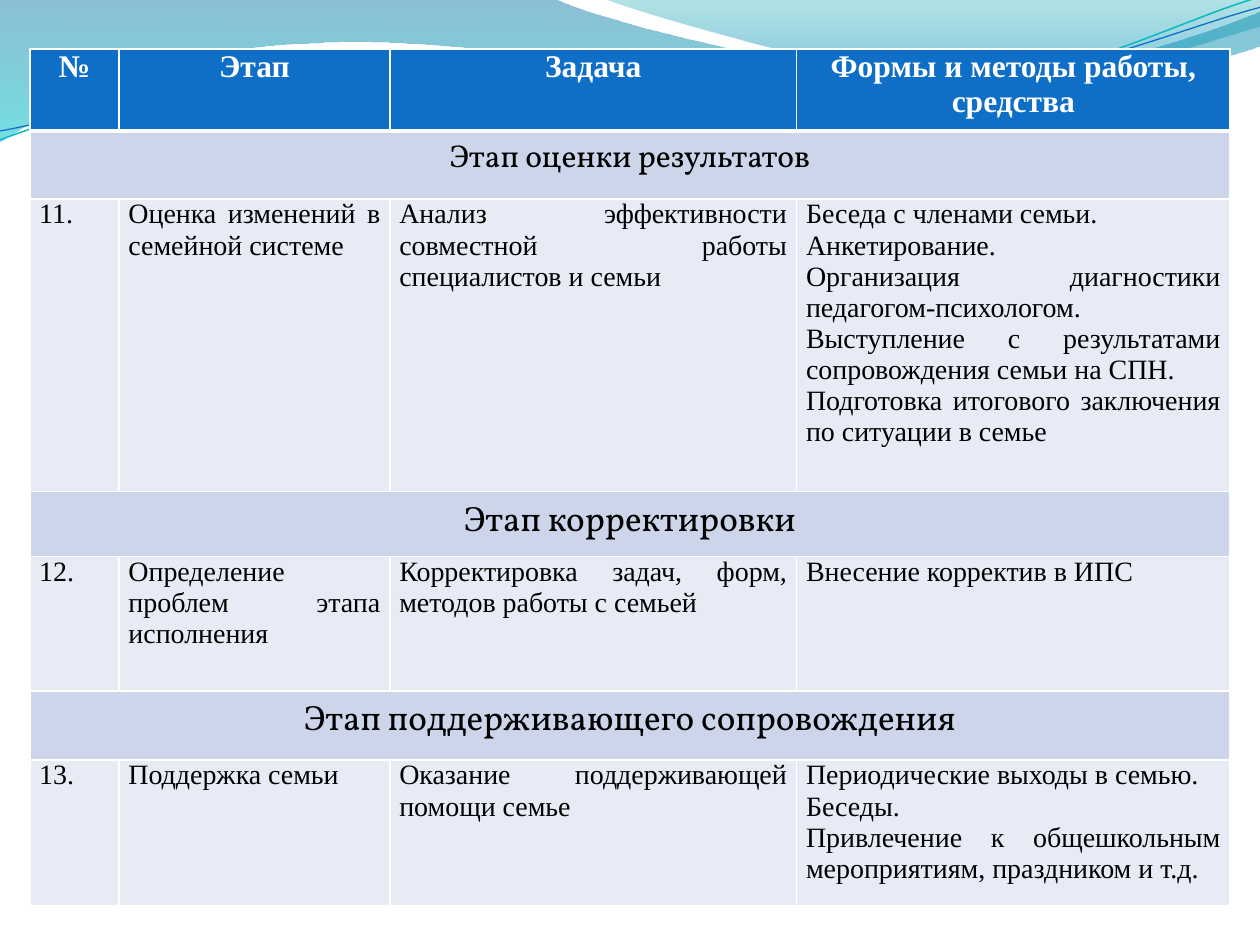
from dataclasses import dataclass

import pptx
import pptx.dml.color
import pptx.enum.text
import pptx.oxml.ns
import pptx.util
from lxml import etree
from pptx.util import Cm, Pt

RGB = pptx.dml.color.RGBColor.from_string
qn = pptx.oxml.ns.qn
ALIGN = pptx.enum.text.PP_ALIGN


@dataclass(frozen=True)
class Theme:
    header_fill: str = "0F6FC6"
    section_fill: str = "CCD5EA"
    body_fill: str = "E7EBF5"
    white: str = "FFFFFF"
    black: str = "000000"
    teal_line: str = "0AB8BF"
    blue_line: str = "0F6FC6"
    wide_wave: tuple = ((0, "0074A1", 45), (1, "00C6CF", 55))
    right_wave: tuple = ((0, "00A1A9", 30), (0.8, "008BBF", 45))
    body_font: str = "Times New Roman"
    section_font: str = "Vollkorn"
    header_size: int = 18
    section_size: int = 20
    body_size: int = 16
    border: int = 1
    header_border: int = 3


THEME = Theme()

# Outlines in cm: a pair is a straight step, a six-tuple a Bézier curve.
WIDE_WAVE = [
    (0, 0), (11.18, -0.03),
    (12.09, 0.43, 16.87, 1.6, 19.25, 1.6),
    (21.67, 1.6, 24.33, 0.66, 25.4, 0.23),
    (25.43, 0.91),
    (24.97, 1.12, 22.1, 1.93, 18.95, 1.91),
    (15.8, 1.91, 9.7, 0.71, 6.53, 0.86),
    (3.28, 0.91, 1.17, 2.11, -0.03, 2.87),
    (0, 0),
]
RIGHT_WAVE = [
    (12.17, -0.03),
    (12.93, 0.28, 17.32, 1.57, 19.53, 1.65),
    (21.74, 1.75, 24.41, 0.81, 25.4, 0.53),
    (25.4, 0), (12.17, -0.03),
]
CURVE_ROTATION = -2.7
TEAL_CURVE = [
    (-0.05, 2.22),
    (1.19, 1.82, 4.02, 1.04, 7.05, 1.06),
    (10.05, 1.07, 15.02, 2.37, 18.08, 2.29),
    (21.13, 2.2, 23.87, 0.91, 25.41, 0.55),
]
BLUE_CURVE = [
    (-0.04, 2.04),
    (1.16, 1.9, 4.18, 1.15, 7.2, 1.16),
    (10.25, 1.18, 15.13, 2.25, 18.18, 2.16),
    (21.21, 2.1, 23.93, 1.06, 25.45, 0.75),
]

COLUMN_WIDTHS = [1.8, 5.46, 8.2, 8.74]
HEADINGS = ["№", "Этап", "Задача", "Формы и методы работы, средства"]
HEADING_HEIGHT = 1.65
# Section title, its size, its height, then the stage row and its height.
STAGES = [
    ("Этап оценки результатов", THEME.header_size, 1.37,
     ["11.", "Оценка изменений в семейной системе",
      "Анализ эффективности совместной работы специалистов и семьи",
      "Беседа с членами семьи.\nАнкетирование.\n"
      "Организация диагностики педагогом-психологом.\n"
      "Выступление с результатами сопровождения семьи на СПН.\n"
      "Подготовка итогового заключения по ситуации в семье"], 5.9),
    ("Этап корректировки", THEME.section_size, 1.31,
     ["12.", "Определение проблем этапа исполнения",
      "Корректировка задач, форм, методов работы с семьей",
      "Внесение корректив в ИПС"], 2.71),
    ("Этап поддерживающего сопровождения", THEME.section_size, 1.39,
     ["13.", "Поддержка семьи", "Оказание поддерживающей помощи семье",
      "Периодические выходы в семью.\nБеседы.\n"
      "Привлечение к общешкольным мероприятиям, праздником и т.д."], 2.94),
]


def add_outline(slide, left, top, outline, close):
    """Draw the outline, turning each six-tuple step into a Bézier segment."""
    points = [(Cm(left + part[-2]), Cm(top + part[-1])) for part in outline]
    builder = slide.shapes.build_freeform(*points[0])
    builder.add_line_segments(points[1:], close=close)
    shape = builder.convert_to_shape()
    shape.shadow.inherit = False
    segments = list(shape._element.iter(qn("a:lnTo")))
    for segment, part in zip(segments, outline[1:]):
        if len(part) == 2:
            continue
        segment.tag = qn("a:cubicBezTo")
        for index in (0, 1):
            x, y = part[2 * index:2 * index + 2]
            control = etree.Element(qn("a:pt"), x=str(Cm(left + x) - shape.left),
                                    y=str(Cm(top + y) - shape.top))
            segment.insert(index, control)
    return shape


def add_wave(slide, left, top, outline, stops):
    wave = add_outline(slide, left, top, outline, close=True)
    wave.line.fill.background()
    wave.fill.gradient()
    wave.fill.gradient_angle = 270
    for stop, (position, color, _) in zip(wave.fill.gradient_stops, stops):
        stop.position = position
        stop.color.rgb = RGB(color)
    for color, (_, _, opacity) in zip(wave._element.iter(qn("a:srgbClr")), stops):
        etree.SubElement(color, qn("a:alpha"), val=str(opacity * 1000))


def add_curve(slide, left, top, outline, color, width):
    curve = add_outline(slide, left, top, outline, close=False)
    curve.rotation = CURVE_ROTATION
    curve.fill.background()
    curve.line.color.rgb = RGB(color)
    curve.line.width = Pt(width)


def add_wave_header(slide, left, top):
    add_wave(slide, left, top, WIDE_WAVE, THEME.wide_wave)
    add_wave(slide, left, top, RIGHT_WAVE, THEME.right_wave)
    add_curve(slide, left, top, TEAL_CURVE, THEME.teal_line, 0.85)
    add_curve(slide, left, top, BLUE_CURVE, THEME.blue_line, 0.75)


def set_borders(cell, top, bottom):
    properties = cell._tc.get_or_add_tcPr()
    widths = {"L": THEME.border, "R": THEME.border, "T": top, "B": bottom}
    for index, (side, width) in enumerate(widths.items()):
        line = etree.Element(qn("a:ln" + side), w=str(Pt(width)))
        fill = etree.SubElement(line, qn("a:solidFill"))
        etree.SubElement(fill, qn("a:srgbClr"), val=THEME.white)
        properties.insert(index, line)


def style_cell(cell, fill, top=THEME.border, bottom=THEME.border):
    cell.fill.solid()
    cell.fill.fore_color.rgb = RGB(fill)
    set_borders(cell, top, bottom)


def write_cell(cell, text, font, size, color, align, bold=False, tight=True):
    cell.text = text
    if tight:
        cell.margin_left = cell.margin_right = Cm(0.19)
        cell.margin_top = cell.margin_bottom = 0
    for paragraph in cell.text_frame.paragraphs:
        paragraph.alignment = align
        paragraph.font.name = font
        paragraph.font.size = Pt(size)
        paragraph.font.bold = bold
        paragraph.font.color.rgb = RGB(color)


def add_stage_table(slide, left, top):
    heights = [HEADING_HEIGHT]
    for _, _, section_height, _, stage_height in STAGES:
        heights += [section_height, stage_height]
    table = slide.shapes.add_table(
        len(heights), len(COLUMN_WIDTHS), Cm(left), Cm(top),
        Cm(sum(COLUMN_WIDTHS)), Cm(sum(heights))).table
    for column, width in zip(table.columns, COLUMN_WIDTHS):
        column.width = Cm(width)
    for row, height in zip(table.rows, heights):
        row.height = Cm(height)

    for cell, heading in zip(table.rows[0].cells, HEADINGS):
        style_cell(cell, THEME.header_fill, bottom=THEME.header_border)
        write_cell(cell, heading, THEME.body_font, THEME.header_size,
                   THEME.white, ALIGN.CENTER, bold=True)
    for index, (title, size, _, stage, _) in enumerate(STAGES):
        section_row = 1 + 2 * index
        section = list(table.rows[section_row].cells)
        for cell in section:
            style_cell(cell, THEME.section_fill,
                       top=THEME.border if index else THEME.header_border)
        section[0].merge(section[-1])
        write_cell(section[0], title, THEME.section_font, size,
                   THEME.black, ALIGN.CENTER, tight=False)
        for cell, text in zip(table.rows[section_row + 1].cells, stage):
            style_cell(cell, THEME.body_fill)
            write_cell(cell, text, THEME.body_font, THEME.body_size,
                       THEME.black, ALIGN.JUSTIFY)


def main():
    deck = pptx.Presentation()
    deck.slide_width, deck.slide_height = Cm(25.4), Cm(19.05)
    slide = deck.slides.add_slide(deck.slide_layouts[6])
    add_wave_header(slide, 0, 0)
    add_stage_table(slide, 0.6, 0.99)
    deck.save("out.pptx")


if __name__ == "__main__":
    main()
